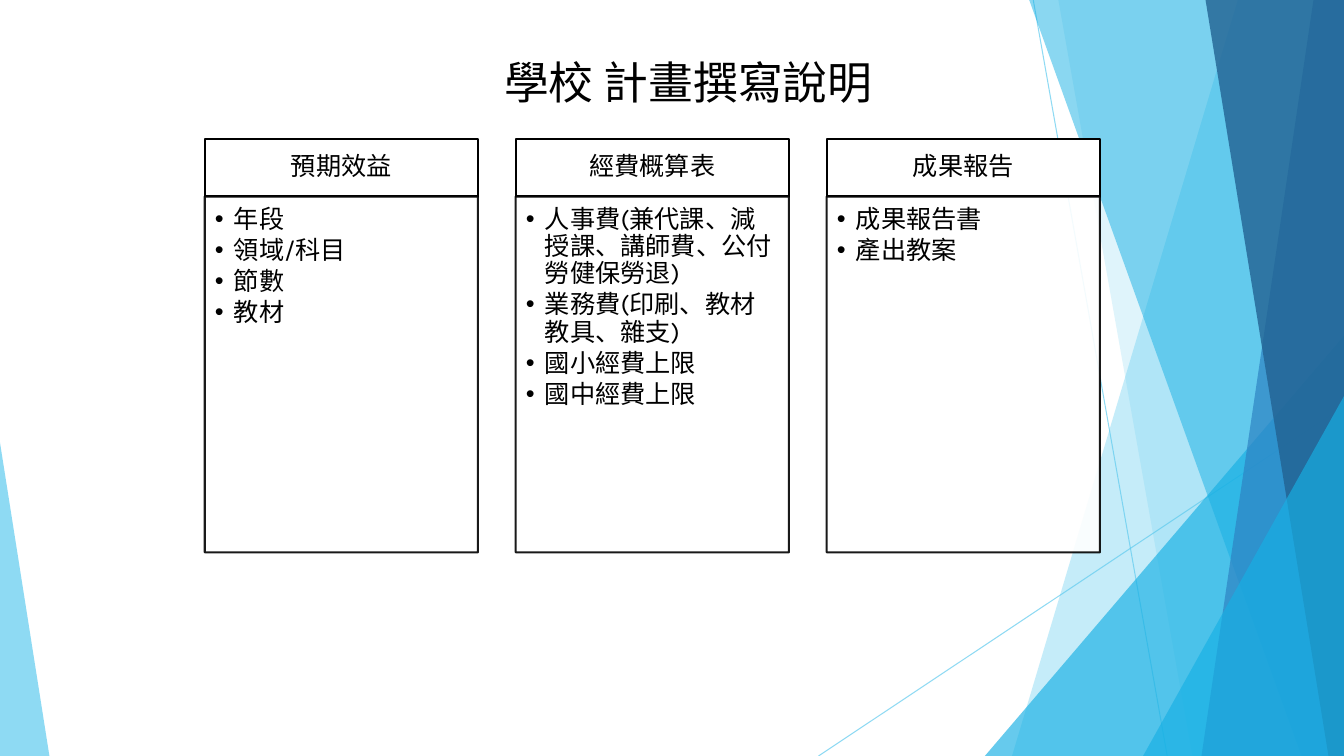
"""Build the slide that explains how a school writes its plan."""
from dataclasses import dataclass

from lxml import etree
from pptx import Presentation
from pptx import slide as slides
from pptx import util as u
from pptx.dml.color import RGBColor
from pptx.enum import shapes, text
from pptx.oxml import ns
from pptx.shapes import base
from pptx.text import text as words

WIDTH, HEIGHT = u.Inches(13.333), u.Inches(7.5)
COMPARISON_LAYOUT = 4
CARD_LEFT, CARD_STEP, CARD_WIDTH = 15.23, 23.14, 20.33
HEADER_TOP, HEADER_HEIGHT, LIST_HEIGHT = 18.4, 7.6, 47.07

BLACK = RGBColor(0x00, 0x00, 0x00)
WHITE = RGBColor(0xFF, 0xFF, 0xFF)
SKY = RGBColor(0x5F, 0xCB, 0xEF)
CYAN = RGBColor(0x17, 0xB0, 0xE4)
BLUE = RGBColor(0x2E, 0x83, 0xC3)
NAVY = RGBColor(0x22, 0x62, 0x92)


@dataclass(frozen=True)
class Ray:
    """A thin line between two points, in percent of the slide."""
    start: tuple[float, float]
    end: tuple[float, float]


@dataclass(frozen=True)
class Band:
    """A slanted area reaching the right edge, in percent of the width."""
    top: float
    bottom: float
    color: RGBColor
    opacity: int


@dataclass(frozen=True)
class Wedge:
    """A right triangle on the bottom edge, in percent of the slide."""
    left: float
    top: float
    width: float
    apex: int
    color: RGBColor
    opacity: int


@dataclass(frozen=True)
class Card:
    """A heading above a bulleted list."""
    heading: str
    items: tuple[str, ...]


DECORATIONS = (
    Ray((76.88, 0), (86.85, 100)),
    Ray((100, 53.73), (60.9, 100)),
    Band(92.1, 75.3, SKY, 36),
    Band(78.75, 88.73, SKY, 20),
    Wedge(73.28, 44.4, 26.72, 1, CYAN, 66),
    Band(76.58, 96.83, CYAN, 50),
    Band(97.73, 89.4, BLUE, 70),
    Band(89.7, 98.85, NAVY, 80),
    Wedge(85.05, 52.4, 14.95, 1, CYAN, 66),
    Wedge(0, 58.53, 3.68, 0, SKY, 70),
)
CARDS = (
    Card("預期效益", ("年段", "領域/科目", "節數", "教材")),
    Card("經費概算表", ("人事費(兼代課、減授課、講師費、公付勞健保勞退)",
                   "業務費(印刷、教材教具、雜支)", "國小經費上限", "國中經費上限")),
    Card("成果報告", ("成果報告書", "產出教案")),
)


def across(percent: float) -> u.Emu:
    """Return a share of the slide's width."""
    return u.Emu(round(WIDTH * percent / 100))


def down(percent: float) -> u.Emu:
    """Return a share of the slide's height."""
    return u.Emu(round(HEIGHT * percent / 100))


def fade(shape: base.BaseShape, opacity: int) -> None:
    """Make every colour of the shape partly transparent."""
    for color in list(shape._element.spPr.iter(ns.qn("a:srgbClr"))):
        etree.SubElement(color, ns.qn("a:alpha"), val=str(opacity * 1000))


def place(shape: base.BaseShape, left: float, top: float, width: float, height: float) -> None:
    """Position a shape by shares of the slide."""
    shape.left, shape.top = across(left), down(top)
    shape.width, shape.height = across(width), down(height)


def draw_decoration(slide: slides.Slide, item: Ray | Band | Wedge) -> None:
    """Draw one ray, band or wedge."""
    if isinstance(item, Ray):
        ray = slide.shapes.add_connector(
            shapes.MSO_CONNECTOR.STRAIGHT, across(item.start[0]), down(item.start[1]),
            across(item.end[0]), down(item.end[1]))
        ray.line.color.rgb, ray.line.width = SKY, u.Pt(0.75)
        etree.SubElement(ray._element.spPr, ns.qn("a:effectLst"))
        fade(ray, 70)
        return
    if isinstance(item, Band):
        builder = slide.shapes.build_freeform(across(item.top), 0)
        builder.add_line_segments(
            [(WIDTH, 0), (WIDTH, HEIGHT), (across(item.bottom), HEIGHT)], close=True)
        area = builder.convert_to_shape()
    else:
        area = slide.shapes.add_shape(
            shapes.MSO_SHAPE.ISOSCELES_TRIANGLE, across(item.left), down(item.top),
            across(item.width), down(100 - item.top))
        area.adjustments[0] = item.apex
    area.shadow.inherit = False
    area.fill.solid()
    area.fill.fore_color.rgb = item.color
    area.line.fill.background()
    fade(area, item.opacity)


def frame(shape: base.BaseShape) -> None:
    """Give a box a white fill and a black outline."""
    shape.fill.solid()
    shape.fill.fore_color.rgb = WHITE
    shape.line.color.rgb, shape.line.width = BLACK, u.Pt(1.5)


def prepare(shape: base.BaseShape, anchor: text.MSO_ANCHOR,
            insets: tuple[float, float, float, float]) -> words._Paragraph:
    """Set up the text area and return its first paragraph."""
    area = shape.text_frame
    area.word_wrap, area.auto_size = True, text.MSO_AUTO_SIZE.NONE
    area.vertical_anchor = anchor
    area.margin_left, area.margin_top, area.margin_right, area.margin_bottom = map(
        u.Inches, insets)
    return area.paragraphs[0]


def write(paragraph: words._Paragraph, content: str, size: float, font: str,
          alignment: text.PP_ALIGN, spacing: float, after: float) -> None:
    """Fill a paragraph with one formatted run."""
    paragraph.alignment, paragraph.line_spacing = alignment, spacing
    paragraph.space_before, paragraph.space_after = u.Pt(0), u.Pt(after)
    run = paragraph.add_run()
    run.text = content
    run.font.size, run.font.name, run.font.bold = u.Pt(size), font, False
    run.font.color.rgb = BLACK


def add_bullet(paragraph: words._Paragraph) -> None:
    """Put a hanging bullet before a paragraph."""
    paragraph.level = 1
    properties = paragraph._p.get_or_add_pPr()
    properties.set("marL", str(u.Inches(0.19)))
    properties.set("indent", str(-u.Inches(0.19)))
    etree.SubElement(properties, ns.qn("a:buFont"), typeface="Arial")
    etree.SubElement(properties, ns.qn("a:buChar"), char="•")


def draw_card(slide: slides.Slide, card: Card, column: int, body: base.BaseShape) -> None:
    """Draw a heading box and fill the body placeholder below it."""
    left = CARD_LEFT + column * CARD_STEP
    header = slide.shapes.add_shape(shapes.MSO_SHAPE.RECTANGLE, 0, 0, 0, 0)
    place(header, left, HEADER_TOP, CARD_WIDTH, HEADER_HEIGHT)
    header.shadow.inherit = False
    frame(header)
    paragraph = prepare(header, text.MSO_ANCHOR.MIDDLE, (0.14, 0.08, 0.14, 0.08))
    write(paragraph, card.heading, 18, "Calibri", text.PP_ALIGN.CENTER, 0.9, 0)

    slide.shapes._spTree.append(body._element)
    place(body, left, HEADER_TOP + HEADER_HEIGHT, CARD_WIDTH, LIST_HEIGHT)
    frame(body)
    fade(body, 90)
    paragraph = prepare(body, text.MSO_ANCHOR.TOP, (0.1, 0.1, 0.14, 0.16))
    for index, item in enumerate(card.items):
        if index:
            paragraph = body.text_frame.add_paragraph()
        write(paragraph, item, 18, "Karla", text.PP_ALIGN.LEFT, 0.9, 2.7)
        add_bullet(paragraph)


def main() -> None:
    """Build and save the presentation."""
    presentation = Presentation()
    presentation.slide_width, presentation.slide_height = WIDTH, HEIGHT
    slide = presentation.slides.add_slide(presentation.slide_layouts[COMPARISON_LAYOUT])
    title, *bodies, spare = slide.placeholders
    spare._element.getparent().remove(spare._element)
    for item in DECORATIONS:
        draw_decoration(slide, item)
    slide.shapes._spTree.append(title._element)
    place(title, 35.93, 6.53, 30.6, 8.53)
    paragraph = prepare(title, text.MSO_ANCHOR.TOP, (0.1, 0.05, 0.1, 0.05))
    write(paragraph, "學校 計畫撰寫說明", 32, "Noto Sans CJK SC", text.PP_ALIGN.CENTER, 1.0, 0)
    for column, (card, body) in enumerate(zip(CARDS, bodies)):
        draw_card(slide, card, column, body)
    presentation.save("out.pptx")


if __name__ == "__main__":
    main()
